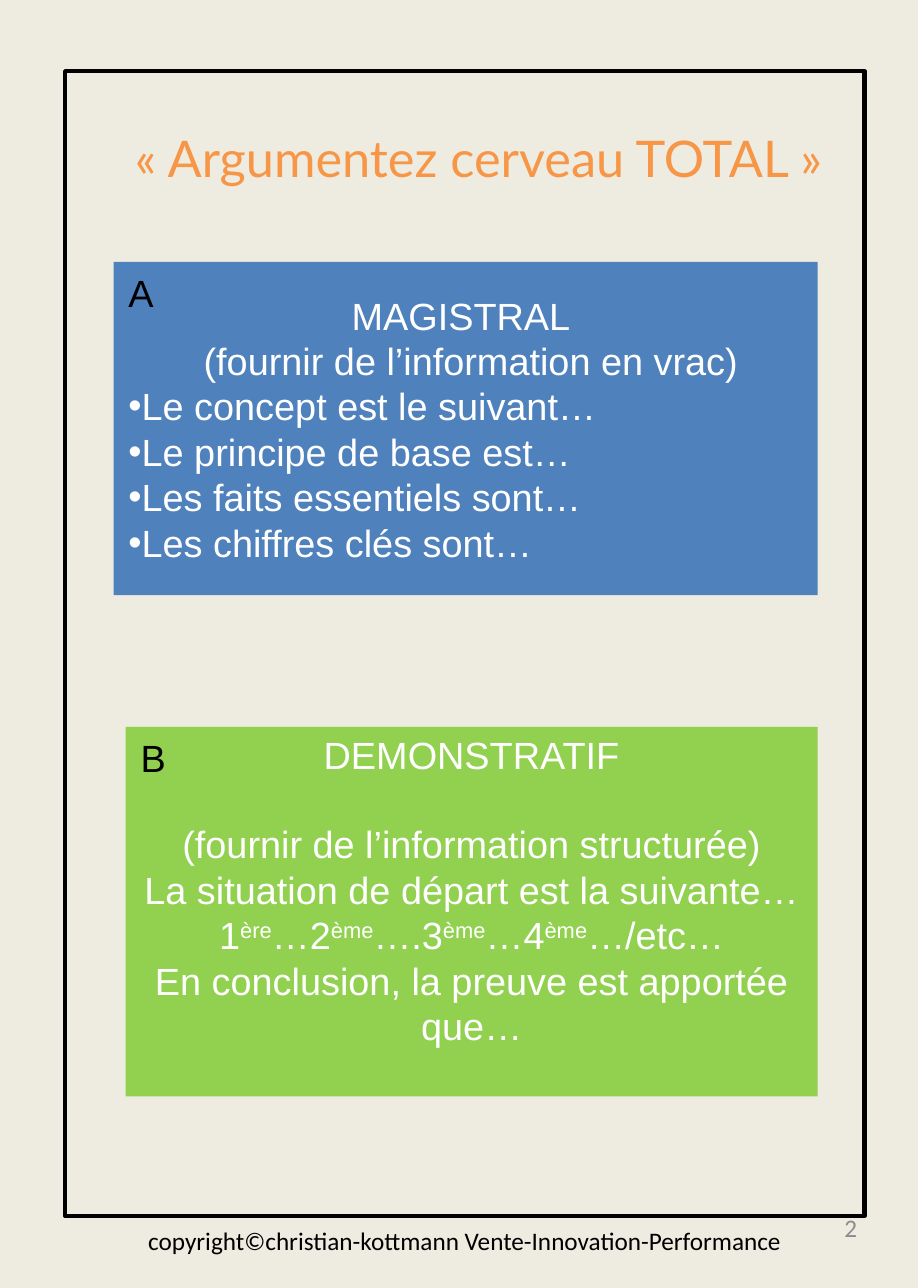
"""Build the slide « Argumentez cerveau TOTAL »."""
from lxml.etree import SubElement
from pptx import Presentation
from pptx.dml.color import RGBColor
from pptx.enum.shapes import MSO_SHAPE
from pptx.enum.text import MSO_ANCHOR, PP_ALIGN
from pptx.oxml.ns import qn
from pptx.util import Inches, Pt

CREAM = RGBColor(0xEE, 0xEC, 0xE1)
ORANGE = RGBColor(0xF7, 0x96, 0x46)
BLUE = RGBColor(0x4F, 0x81, 0xBD)
GREEN = RGBColor(0x92, 0xD0, 0x50)
GREY = RGBColor(0x8C, 0x8C, 0x8C)
BLACK = RGBColor(0, 0, 0)
WHITE = RGBColor(0xFF, 0xFF, 0xFF)

MAGISTRAL = ["MAGISTRAL ", " (fournir de l’information en vrac)"]
MAGISTRAL_POINTS = [
    "Le concept est le suivant…",
    "Le principe de base est…",
    "Les faits essentiels sont…",
    "Les chiffres clés sont…",
]
DEMONSTRATIF = [
    "DEMONSTRATIF",
    "(fournir de l’information structurée)",
    "La situation de départ est la suivante…",
    "1^ère^…2^ème^….3^ème^…4^ème^…/etc…",
    "En conclusion, la preuve est apportée que…",
]


def place(shape, left, top, width, height):
    """Move and size a shape, in inches."""
    shape.left, shape.top = Inches(left), Inches(top)
    shape.width, shape.height = Inches(width), Inches(height)


def style(para, size, color, name="Arial", align=PP_ALIGN.LEFT):
    """Set the font and alignment of a paragraph."""
    para.alignment = align
    para.font.size = Pt(size)
    para.font.name = name
    para.font.color.rgb = color


def add_rectangle(page, *area):
    """Add a rectangle without shadow or line."""
    box = page.shapes.add_shape(MSO_SHAPE.RECTANGLE, *map(Inches, area))
    box.shadow.inherit = False
    box.line.fill.background()
    return box


def add_label(page, area, text, size, color, name="Arial",
              align=PP_ALIGN.LEFT, anchor=MSO_ANCHOR.MIDDLE):
    """Add a one-line text box."""
    frame = page.shapes.add_textbox(*map(Inches, area)).text_frame
    frame.word_wrap = True
    frame.vertical_anchor = anchor
    frame.text = text
    style(frame.paragraphs[0], size, color, name, align)


def add_spans(para, text):
    """Add text whose parts between carets are superscript."""
    for index, part in enumerate(text.split("^")):
        span = para.add_run()
        span.text = part
        if index % 2:
            span.font._element.set("baseline", "30000")


def add_bullet(para):
    """Give a paragraph a round bullet without indent."""
    properties = para._p.get_or_add_pPr()
    properties.set("marL", "0")
    properties.set("indent", "0")
    SubElement(properties, qn("a:buFont"), typeface="Arial")
    SubElement(properties, qn("a:buChar"), char="•")


def add_panel(page, area, letter, color, lines, points=()):
    """Add a coloured panel with centred lines, bullets and a corner letter."""
    box = add_rectangle(page, *area)
    box.fill.solid()
    box.fill.fore_color.rgb = color
    frame = box.text_frame
    frame.word_wrap = True
    frame.vertical_anchor = MSO_ANCHOR.MIDDLE
    for index, text in enumerate([*lines, *points]):
        para = frame.add_paragraph() if index else frame.paragraphs[0]
        add_spans(para, text)
        is_point = index >= len(lines)
        if is_point:
            add_bullet(para)
        style(para, 18, WHITE,
              align=PP_ALIGN.LEFT if is_point else PP_ALIGN.CENTER)
    add_label(page, (*area[:2], 0.38, 0.4), letter, 18, BLACK,
              anchor=MSO_ANCHOR.TOP)
    return frame


def add_title(page, text):
    """Fill and place the title placeholder."""
    title = page.shapes.title
    place(title, 0.61, 0.79, 5.1, 0.5)
    frame = title.text_frame
    frame.text = text
    frame.word_wrap = False
    frame.vertical_anchor = MSO_ANCHOR.MIDDLE
    style(frame.paragraphs[0], 24, ORANGE, "Lato", PP_ALIGN.CENTER)


def main():
    """Build and save the deck."""
    deck = Presentation()
    deck.slide_width, deck.slide_height = Pt(436.5), Pt(612.38)
    page = deck.slides.add_slide(deck.slide_layouts[5])
    page.background.fill.solid()
    page.background.fill.fore_color.rgb = CREAM

    border = add_rectangle(page, 0.43, 0.47, 5.28, 7.56)
    border.fill.background()
    border.line.color.rgb = BLACK
    border.line.width = Pt(2)

    add_title(page, "« Argumentez cerveau TOTAL »")
    add_panel(page, (0.75, 1.73, 4.65, 2.2), "A", BLUE, MAGISTRAL, MAGISTRAL_POINTS)
    proof = add_panel(page, (0.83, 4.8, 4.57, 2.44), "B", GREEN, DEMONSTRATIF)
    proof.vertical_anchor = MSO_ANCHOR.TOP
    proof.margin_top = Inches(0.03)
    proof.paragraphs[0].space_after = Pt(21)

    add_label(page, (4.35, 7.88, 1.41, 0.45), "2", 12, GREY, "Calibri",
              PP_ALIGN.RIGHT)
    add_label(page, (0.43, 7.88, 5.28, 0.62),
              "copyright©christian-kottmann Vente-Innovation-Performance",
              12, BLACK, "Calibri", PP_ALIGN.CENTER)
    deck.save("out.pptx")


if __name__ == "__main__":
    main()
